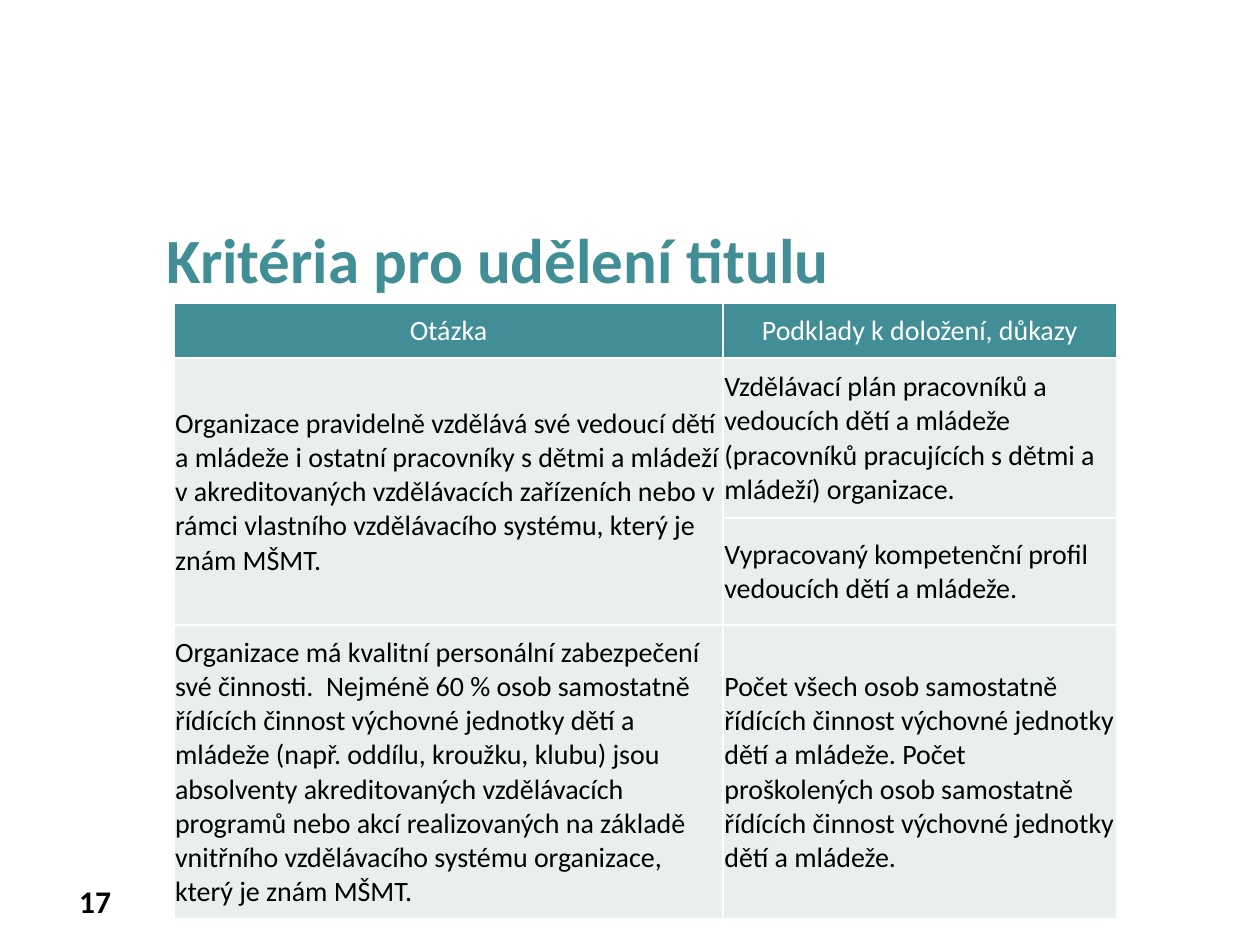
from lxml import etree
from pptx import Presentation
from pptx.dml.color import RGBColor
from pptx.enum.text import MSO_ANCHOR, MSO_AUTO_SIZE, PP_ALIGN
from pptx.oxml import parse_xml
from pptx.oxml.ns import nsdecls
from pptx.util import Inches, Pt

TEAL = RGBColor(0x41, 0x8E, 0x96)
PALE = RGBColor(0xE9, 0xEE, 0xEF)
WHITE = RGBColor(0xFF, 0xFF, 0xFF)
BLACK = RGBColor(0x00, 0x00, 0x00)


def style_text(paragraph, size, color, bold, align):
    paragraph.alignment = align
    for run in paragraph.runs:
        run.font.name = "Calibri"
        run.font.size = Pt(size)
        run.font.bold = bold
        run.font.color.rgb = color


def add_borders(cell):
    for side in ("lnL", "lnR", "lnT", "lnB"):
        cell._tc.get_or_add_tcPr().append(parse_xml(
            f'<a:{side} {nsdecls("a")} w="{Pt(1)}"><a:solidFill>'
            f'<a:srgbClr val="{WHITE}"/></a:solidFill></a:{side}>'))


prs = Presentation()
prs.slide_width = Inches(10)
prs.slide_height = Inches(7.5)
slide = prs.slides.add_slide(prs.slide_layouts[5])

heading = slide.shapes.title
heading.left, heading.top = Inches(1.22), Inches(1.7)
heading.width, heading.height = Inches(8.28), Inches(5.51)
heading.text_frame.text = "Kritéria pro udělení titulu"
heading.text_frame.vertical_anchor = MSO_ANCHOR.TOP
heading.text_frame.auto_size = MSO_AUTO_SIZE.NONE
style_text(heading.text_frame.paragraphs[0], 36, TEAL, True, PP_ALIGN.LEFT)

page_number = slide.shapes.add_textbox(Inches(0.27), Inches(6.95), Inches(0.71), Inches(0.4))
page_number.text_frame.word_wrap = True
page_number.text_frame.text = "17"
style_text(page_number.text_frame.paragraphs[0], 18, BLACK, True, PP_ALIGN.RIGHT)

criteria_rows = [
    ("Otázka", "Podklady k doložení, důkazy"),
    ("Organizace pravidelně vzdělává své vedoucí dětí a mládeže i ostatní pracovníky "
     "s dětmi a mládeží v akreditovaných vzdělávacích zařízeních nebo v rámci vlastního "
     "vzdělávacího systému, který je znám MŠMT.",
     "Vzdělávací plán pracovníků a vedoucích dětí a mládeže (pracovníků pracujících "
     "s dětmi a mládeží) organizace."),
    ("", "Vypracovaný kompetenční profil vedoucích dětí a mládeže."),
    ("Organizace má kvalitní personální zabezpečení své činnosti.  Nejméně 60 % osob "
     "samostatně řídících činnost výchovné jednotky dětí a mládeže (např. oddílu, kroužku, "
     "klubu) jsou absolventy akreditovaných vzdělávacích programů nebo akcí realizovaných "
     "na základě vnitřního vzdělávacího systému organizace, který je znám MŠMT.",
     "Počet všech osob samostatně řídících činnost výchovné jednotky dětí a mládeže. "
     "Počet proškolených osob samostatně řídících činnost výchovné jednotky dětí a mládeže."),
]
column_widths = (4.36, 3.12)
row_heights = (0.43, 1.27, 0.85, 2.33)

criteria = slide.shapes.add_table(
    len(row_heights), len(column_widths), Inches(1.38), Inches(2.41),
    Inches(sum(column_widths)), Inches(sum(row_heights))).table
for column, width in zip(criteria.columns, column_widths):
    column.width = Inches(width)
for row, height in zip(criteria.rows, row_heights):
    row.height = Inches(height)
criteria.cell(1, 0).merge(criteria.cell(2, 0))

for row_index, texts in enumerate(criteria_rows):
    is_header = row_index == 0
    for column_index, text in enumerate(texts):
        cell = criteria.cell(row_index, column_index)
        add_borders(cell)
        cell.fill.solid()
        cell.fill.fore_color.rgb = TEAL if is_header else PALE
        cell.vertical_anchor = MSO_ANCHOR.MIDDLE
        cell.margin_left = cell.margin_right = cell.margin_top = Inches(0.01)
        cell.margin_bottom = 0
        if text:
            cell.text_frame.text = text
            style_text(cell.text_frame.paragraphs[0], 16, WHITE if is_header else BLACK,
                       False, PP_ALIGN.CENTER if is_header else PP_ALIGN.LEFT)

prs.save("out.pptx")
